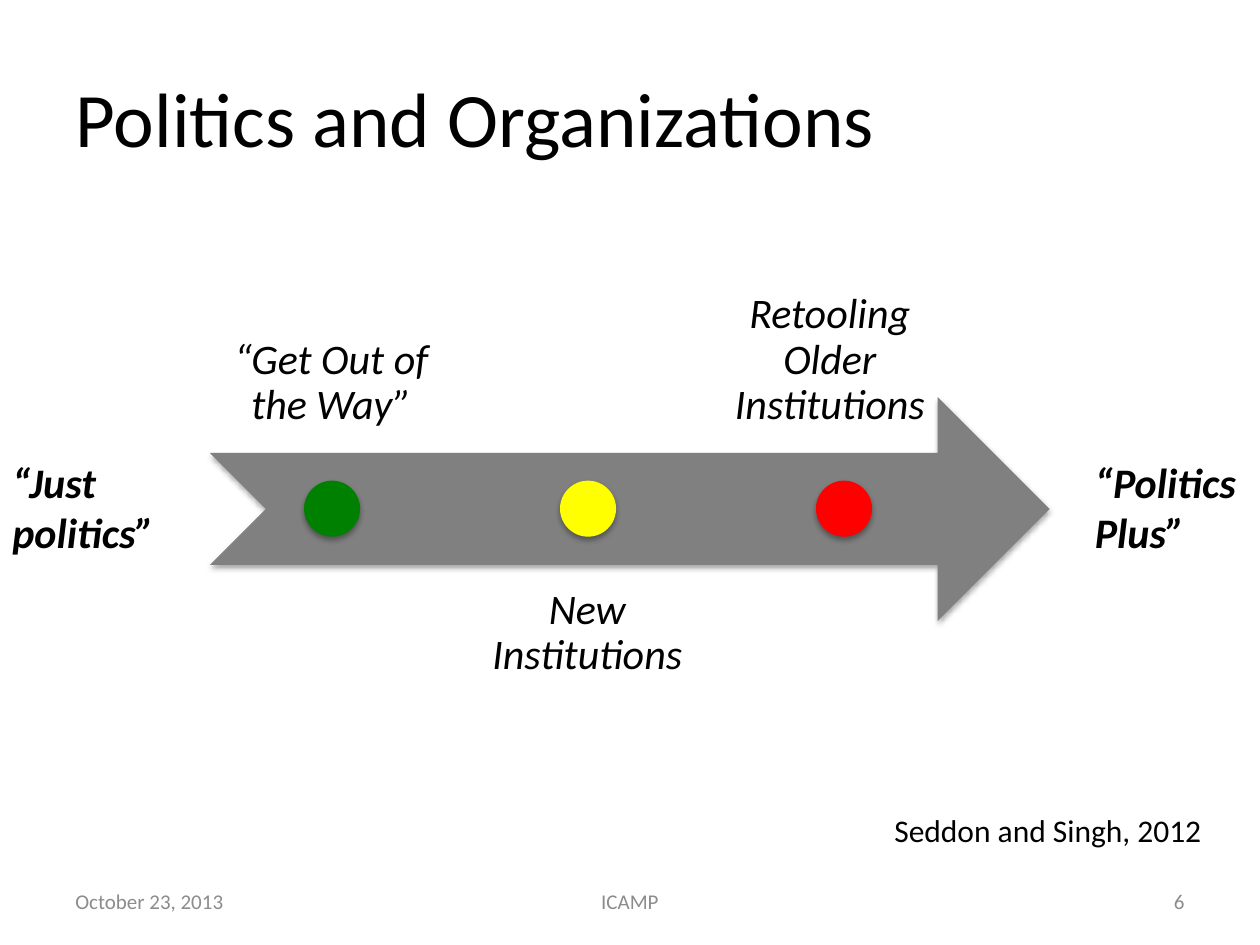
import pptx
import pptx.dml.color
import pptx.enum.shapes
import pptx.enum.text
import pptx.oxml
import pptx.oxml.ns
import pptx.util
from pptx.util import Cm

Align = pptx.enum.text.PP_ALIGN
Anchor = pptx.enum.text.MSO_ANCHOR
Shape = pptx.enum.shapes.MSO_SHAPE

SHADOW = (
    f'<a:effectLst {pptx.oxml.ns.nsdecls("a")}>'
    '<a:outerShdw blurRad="40000" dist="23000" dir="5400000" rotWithShape="0">'
    '<a:srgbClr val="000000"><a:alpha val="35000"/></a:srgbClr>'
    '</a:outerShdw></a:effectLst>'
)


def color(value):
    return pptx.dml.color.RGBColor.from_string(value)


class SlideBuilder:
    font = "Calibri"
    ink = "000000"
    muted = "8C8C8C"

    def __init__(self, page):
        self.page = page

    def fill_text(self, frame, lines, size, ink=None, align=Align.LEFT,
                  bold=False, italic=False, spacing=None):
        frame.text = "\n".join(lines)
        for para in frame.paragraphs:
            para.alignment = align
            para.line_spacing = spacing
            para.font.name = self.font
            para.font.size = pptx.util.Pt(size)
            para.font.bold = bold
            para.font.italic = italic
            para.font.color.rgb = color(ink or self.ink)

    def title(self, text, left, top, width, height):
        box = self.page.shapes.title
        box.left, box.top, box.width, box.height = map(Cm, (left, top, width, height))
        box.text_frame.vertical_anchor = Anchor.MIDDLE
        self.fill_text(box.text_frame, [text], 44)

    def text(self, lines, left, top, width, height, size, anchor=Anchor.TOP,
             inset=None, grow=False, wrap=True, **style):
        box = self.page.shapes.add_textbox(*map(Cm, (left, top, width, height)))
        frame = box.text_frame
        frame.word_wrap = wrap
        frame.vertical_anchor = anchor
        if grow:
            frame.auto_size = pptx.enum.text.MSO_AUTO_SIZE.SHAPE_TO_FIT_TEXT
        if inset is not None:
            frame.margin_left = frame.margin_right = Cm(inset)
            frame.margin_top = frame.margin_bottom = Cm(inset)
        self.fill_text(frame, lines, size, **style)

    def shape(self, kind, left, top, width, height, fill):
        shape = self.page.shapes.add_shape(kind, *map(Cm, (left, top, width, height)))
        shape.fill.solid()
        shape.fill.fore_color.rgb = color(fill)
        shape.line.fill.background()
        shape.shadow.inherit = False
        properties = shape._element.spPr
        properties.remove(properties.find(pptx.oxml.ns.qn("a:effectLst")))
        properties.append(pptx.oxml.parse_xml(SHADOW))

    def stage_label(self, text, left, top, anchor):
        self.text([text], left, top, 4.9, 4.52, 24, anchor, inset=0.48,
                  align=Align.CENTER, italic=True, spacing=0.9)

    def end_label(self, lines, left):
        self.text(lines, left, 9.07, 3.58, 2.31, 24, grow=True, bold=True, italic=True)

    def footer(self, text, left, width, align):
        self.text([text], left, 17.65, width, 1.02, 12, Anchor.MIDDLE,
                  ink=self.muted, align=align)


def main():
    deck = pptx.Presentation()
    deck.slide_width, deck.slide_height = Cm(25.4), Cm(19.05)
    slide = SlideBuilder(deck.slides.add_slide(deck.slide_layouts[5]))

    slide.title("Politics and Organizations", 1.27, 0.76, 19.9, 3.18)
    slide.shape(Shape.NOTCHED_RIGHT_ARROW, 4.23, 8, 16.93, 4.52, "808080")

    stages = [
        ("“Get Out of the Way”", 4.23, 4.6, Anchor.BOTTOM, "008000"),
        ("New Institutions", 9.39, 11.38, Anchor.TOP, "FFFF00"),
        ("Retooling Older Institutions", 14.28, 4.6, Anchor.BOTTOM, "FF0000"),
    ]
    for index, (text, left, top, anchor, fill) in enumerate(stages):
        slide.stage_label(text, left, top, anchor)
        slide.shape(Shape.OVAL, 6.13 + 5.16 * index, 9.69, 1.13, 1.13, fill)

    slide.end_label(["“Just politics”"], 0)
    slide.end_label(["“Politics", "Plus”"], 21.82)

    slide.footer("October 23, 2013", 1.27, 5.93, Align.LEFT)
    slide.footer("6", 18.2, 5.93, Align.RIGHT)
    slide.footer("ICAMP", 8.68, 8.04, Align.CENTER)
    slide.text(["Seddon and Singh, 2012"], 17.78, 16.23, 6.76, 1.03, 18,
               grow=True, wrap=False)

    deck.save("out.pptx")


if __name__ == "__main__":
    main()
